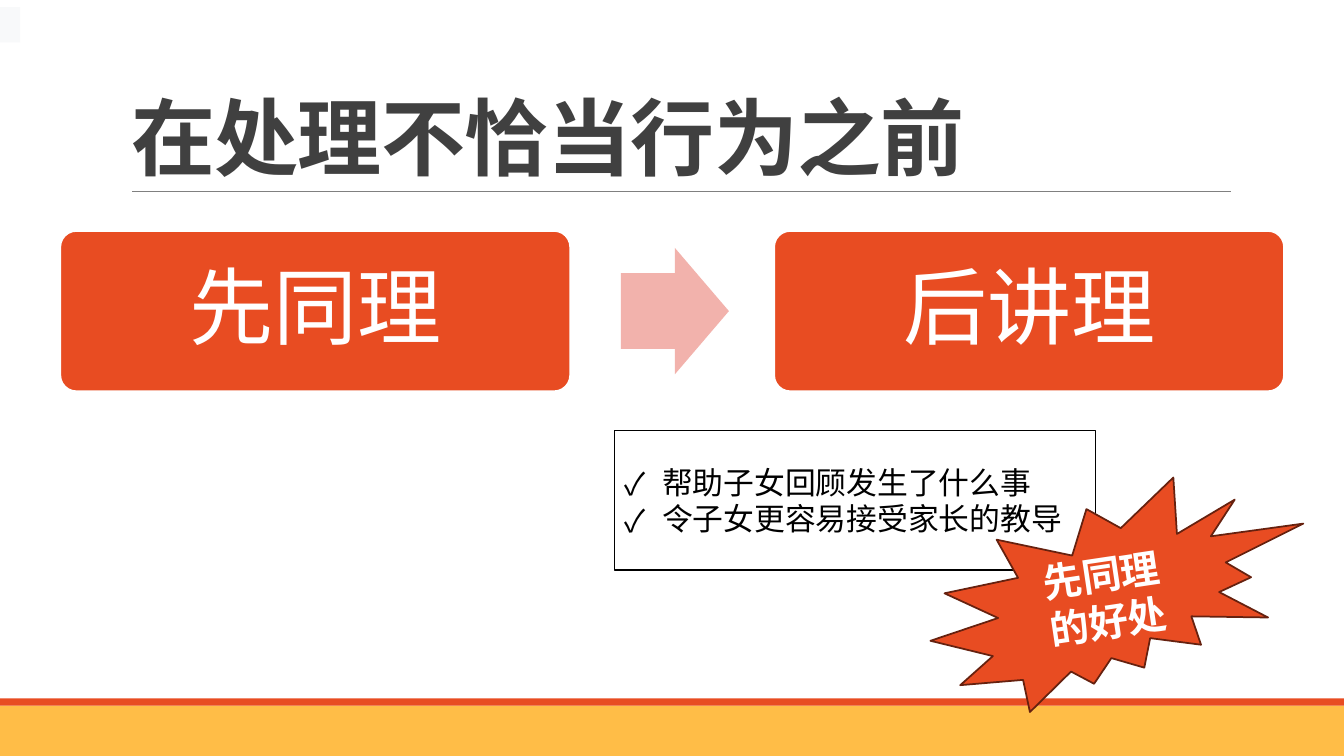
from dataclasses import dataclass
from typing import Optional

import lxml.etree
import pptx
import pptx.dml.color
import pptx.enum.shapes
import pptx.enum.text
import pptx.oxml.ns
import pptx.util

Cm = pptx.util.Cm
Pt = pptx.util.Pt
Preset = pptx.enum.shapes.MSO_SHAPE
Align = pptx.enum.text.PP_ALIGN
Anchor = pptx.enum.text.MSO_ANCHOR
qn = pptx.oxml.ns.qn

COLORS = {
    "amber": "FFBD47",
    "orange": "E84C22",
    "rust": "66210F",
    "pink": "F2B2AC",
    "rule": "808080",
    "title": "404040",
    "pale": "F8F9FA",
    "white": "FFFFFF",
    "black": "000000",
}
CHINESE_FONT = "Noto Sans CJK SC"
STEP_FONT = "TeX Gyre Adventor"


@dataclass
class TextStyle:
    size: float
    color: str
    font: str = CHINESE_FONT
    bold: bool = False
    align: Align = Align.CENTER
    line_spacing: float = 1.0
    space_after: float = 0
    bullet: Optional[str] = None


@dataclass
class Block:
    preset: Preset
    left: float
    top: float
    width: float
    height: float
    fill: Optional[str] = None
    outline: Optional[str] = None
    adjustments: tuple[float, ...] = ()
    rotation: float = 0
    lines: tuple[str, ...] = ()
    style: Optional[TextStyle] = None
    inset: Optional[float] = None


def rgb(name: str) -> pptx.dml.color.RGBColor:
    return pptx.dml.color.RGBColor.from_string(COLORS[name])


def format_paragraph(paragraph, style: TextStyle) -> None:
    paragraph.alignment = style.align
    paragraph.line_spacing = style.line_spacing
    paragraph.space_before = Pt(0)
    paragraph.space_after = Pt(style.space_after)
    properties = paragraph._p.get_or_add_pPr()
    if style.bullet:
        indent = Cm(0.95)
        properties.set("marL", str(indent))
        properties.set("indent", str(-indent))
        lxml.etree.SubElement(properties, qn("a:buFont")).set("typeface", CHINESE_FONT)
        lxml.etree.SubElement(properties, qn("a:buChar")).set("char", style.bullet)
    font = paragraph.font
    font.size = Pt(style.size)
    font.bold = style.bold
    font.color.rgb = rgb(style.color)
    font.name = style.font
    defaults = properties.find(qn("a:defRPr"))
    lxml.etree.SubElement(defaults, qn("a:ea")).set("typeface", style.font)


def write_lines(frame, lines: tuple[str, ...], style: TextStyle) -> None:
    frame.word_wrap = True
    frame.auto_size = pptx.enum.text.MSO_AUTO_SIZE.NONE
    for index, line in enumerate(lines):
        paragraph = frame.add_paragraph() if index else frame.paragraphs[0]
        paragraph.text = line
        format_paragraph(paragraph, style)


def draw_block(slide, block: Block) -> None:
    shape = slide.shapes.add_shape(
        block.preset, Cm(block.left), Cm(block.top), Cm(block.width), Cm(block.height)
    )
    shape.shadow.inherit = False
    shape.rotation = block.rotation
    for index, value in enumerate(block.adjustments):
        shape.adjustments[index] = value
    if block.fill:
        shape.fill.solid()
        shape.fill.fore_color.rgb = rgb(block.fill)
    else:
        shape.fill.background()
    if block.outline:
        shape.line.color.rgb = rgb(block.outline)
        shape.line.width = Pt(1.25)
    else:
        shape.line.fill.background()
    if block.style:
        frame = shape.text_frame
        frame.vertical_anchor = Anchor.MIDDLE
        if block.inset is not None:
            frame.margin_left = frame.margin_right = Cm(block.inset)
            frame.margin_top = frame.margin_bottom = Cm(block.inset)
        write_lines(frame, block.lines, block.style)


def draw_title(slide, heading: str) -> None:
    title = slide.shapes.title
    title.left, title.top = Cm(3.05), Cm(0.79)
    title.width, title.height = Cm(27.94), Cm(4.04)
    title.text_frame.vertical_anchor = Anchor.BOTTOM
    style = TextStyle(60, "title", bold=True, align=Align.LEFT, line_spacing=0.85)
    write_lines(title.text_frame, (heading,), style)
    title.text_frame.paragraphs[0].font._element.set("spc", "-50")


def draw_title_rule(slide) -> None:
    rule = slide.shapes.add_connector(
        pptx.enum.shapes.MSO_CONNECTOR.STRAIGHT, Cm(3.33), Cm(4.83), Cm(31.01), Cm(4.83)
    )
    rule.line.color.rgb = rgb("rule")
    rule.line.width = Pt(0.5)
    lxml.etree.SubElement(rule._element.spPr, qn("a:effectLst"))


def step(text: str, left: float) -> Block:
    style = TextStyle(60, "white", STEP_FONT, line_spacing=0.9, space_after=21)
    return Block(
        Preset.ROUNDED_RECTANGLE, left, 5.82, 12.85, 4.04, "orange", "white",
        adjustments=(0.1,), lines=(text,), style=style, inset=0.76,
    )


def main() -> None:
    presentation = pptx.Presentation()
    presentation.slide_width = Cm(33.87)
    presentation.slide_height = Cm(19.05)
    slide = presentation.slides.add_slide(presentation.slide_layouts[5])

    benefits = (
        "帮助子女回顾发生了什么事",
        "令子女更容易接受家长的教导",
    )
    blocks = [
        Block(Preset.RECTANGLE, 0, 17.78, 33.87, 1.27, "amber"),
        Block(Preset.RECTANGLE, 0, 17.6, 33.87, 0.18, "orange"),
        step("先同理", 1.52),
        Block(Preset.RIGHT_ARROW, 15.65, 6.25, 2.72, 3.18, "pink", adjustments=(0.6, 0.5)),
        step("后讲理", 19.51),
        Block(Preset.RECTANGLE, 0, 0.18, 0.51, 0.89, "pale"),
        Block(
            Preset.RECTANGLE, 15.49, 10.85, 12.12, 3.51, outline="black", lines=benefits,
            style=TextStyle(22, "black", align=Align.LEFT, bullet="✓"),
        ),
        Block(
            Preset.EXPLOSION2, 23.32, 12.27, 9.73, 5.31, "orange", "rust", rotation=351.5,
            lines=("先同理的好处",), style=TextStyle(28, "white", bold=True),
        ),
    ]

    draw_title(slide, "在处理不恰当行为之前")
    draw_title_rule(slide)
    for block in blocks:
        draw_block(slide, block)
    presentation.save("out.pptx")


if __name__ == "__main__":
    main()
